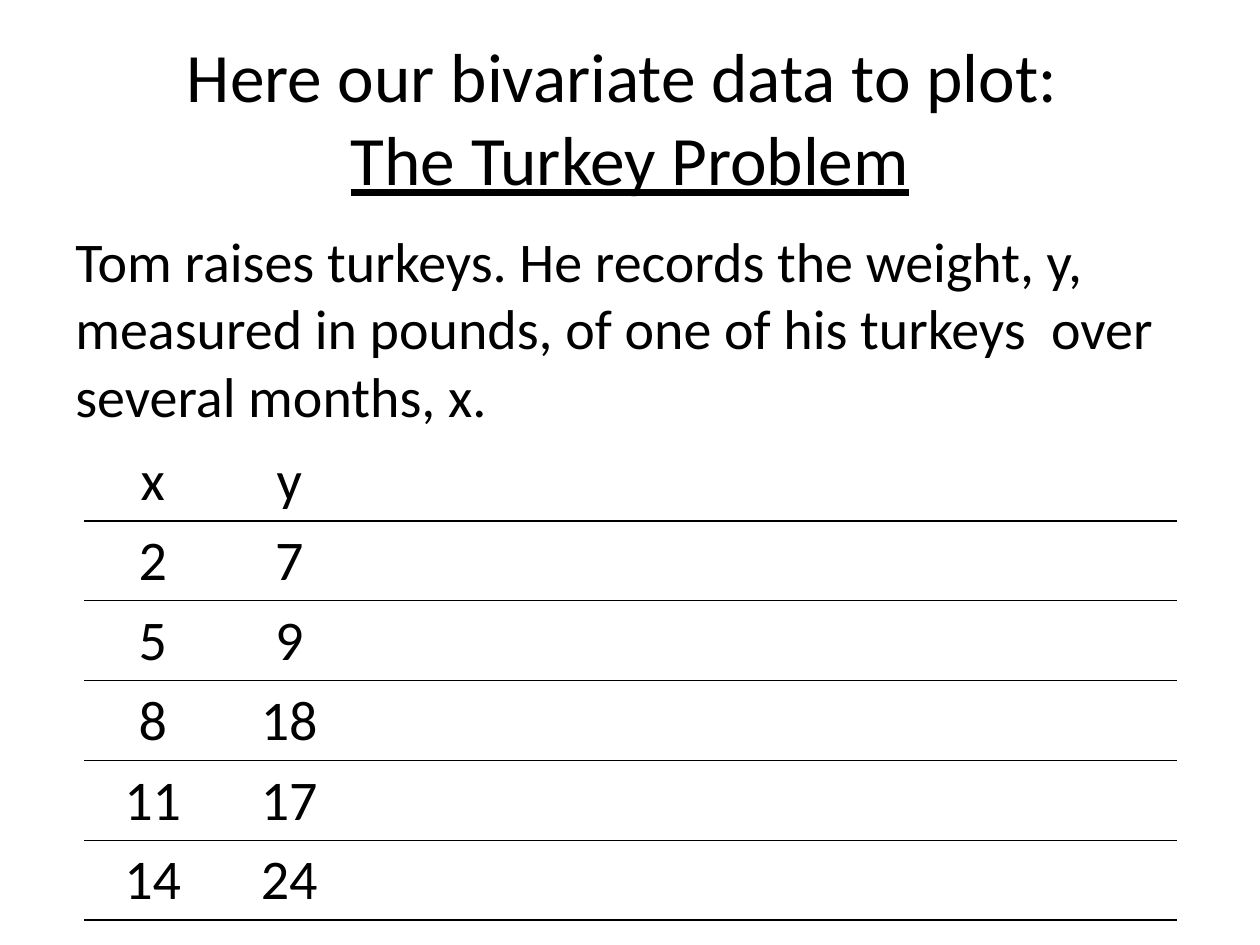
"""Build the turkey problem slide with its table of months and weights."""
import dataclasses

import lxml.etree
import pptx
import pptx.dml.color
import pptx.enum.text
import pptx.oxml.ns
import pptx.util

Inches = pptx.util.Inches
Align = pptx.enum.text.PP_ALIGN
Anchor = pptx.enum.text.MSO_ANCHOR

FONT = "Calibri"
INK = "000000"
BODY_SIZE = 32
COLUMNS = 8
PLAIN_TABLE_STYLE = "{2D5ABB26-0587-4C30-8999-92F81FD0307C}"


@dataclasses.dataclass
class Reading:
    x: str
    y: str


READINGS = [
    Reading("x", "y"),
    Reading("2", "7"),
    Reading("5", "9"),
    Reading("8", "18"),
    Reading("11", "17"),
    Reading("14", "24"),
]


def color(value: str) -> pptx.dml.color.RGBColor:
    return pptx.dml.color.RGBColor.from_string(value)


def add_span(para, text: str, size: float, underline: bool = False) -> None:
    span = para.add_run()
    span.text = text
    span.font.name = FONT
    span.font.size = pptx.util.Pt(size)
    span.font.color.rgb = color(INK)
    if underline:
        span.font.underline = True


def add_rule(cell, side: str) -> None:
    properties = cell._tc.get_or_add_tcPr()
    qn = pptx.oxml.ns.qn
    line = lxml.etree.SubElement(properties, qn(f"a:{side}"), w=str(pptx.util.Pt(1)))
    fill = lxml.etree.SubElement(line, qn("a:solidFill"))
    lxml.etree.SubElement(fill, qn("a:srgbClr"), val=INK)


def add_title(page) -> None:
    title = page.shapes.title
    title.left, title.top = Inches(0.5), Inches(0.3)
    title.width, title.height = Inches(9), Inches(1.25)
    frame = title.text_frame
    frame.auto_size = pptx.enum.text.MSO_AUTO_SIZE.NONE
    frame.vertical_anchor = Anchor.MIDDLE
    para = frame.paragraphs[0]
    para.alignment = Align.CENTER
    add_span(para, "Here our bivariate data to plot: ", 39.6)
    para.add_line_break()
    add_span(para, "The Turkey Problem", 39.6, underline=True)


def add_problem(page) -> None:
    box = page.shapes.add_textbox(Inches(0.5), Inches(1.75), Inches(9), Inches(1.75))
    box.text_frame.word_wrap = True
    add_span(
        box.text_frame.paragraphs[0],
        "Tom raises turkeys. He records the weight, y, measured in pounds, "
        "of one of his turkeys  over several months, x.",
        BODY_SIZE,
    )


def add_readings(page, readings: list[Reading]) -> None:
    frame = page.shapes.add_table(
        len(readings), COLUMNS,
        Inches(0.67), Inches(3.5), Inches(8.67), Inches(0.6 * len(readings)),
    )
    table = frame.table
    table.first_row = False
    table.horz_banding = False
    style = table._tbl.tblPr.find(pptx.oxml.ns.qn("a:tableStyleId"))
    style.text = PLAIN_TABLE_STYLE
    for row, reading in enumerate(readings):
        for column, text in enumerate((reading.x, reading.y)):
            para = table.cell(row, column).text_frame.paragraphs[0]
            para.alignment = Align.CENTER
            add_span(para, text, BODY_SIZE)
        for column in range(COLUMNS):
            cell = table.cell(row, column)
            if row:
                add_rule(cell, "lnT")
            add_rule(cell, "lnB")
            cell.fill.background()


def main() -> None:
    deck = pptx.Presentation()
    deck.slide_width, deck.slide_height = Inches(10), Inches(7.5)
    page = deck.slides.add_slide(deck.slide_layouts.get_by_name("Title Only"))
    page.background.fill.solid()
    page.background.fill.fore_color.rgb = color("FFFFFF")
    add_title(page)
    add_problem(page)
    add_readings(page, READINGS)
    deck.save("out.pptx")


if __name__ == "__main__":
    main()
